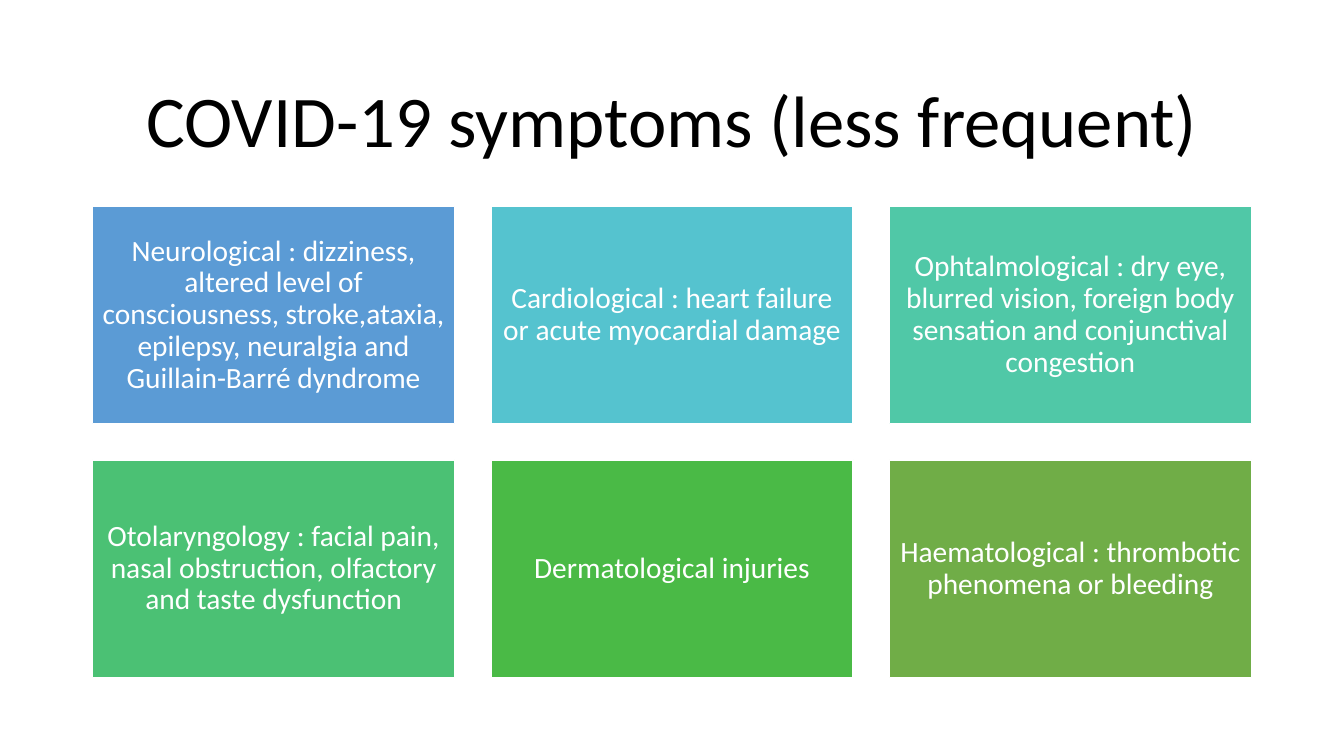
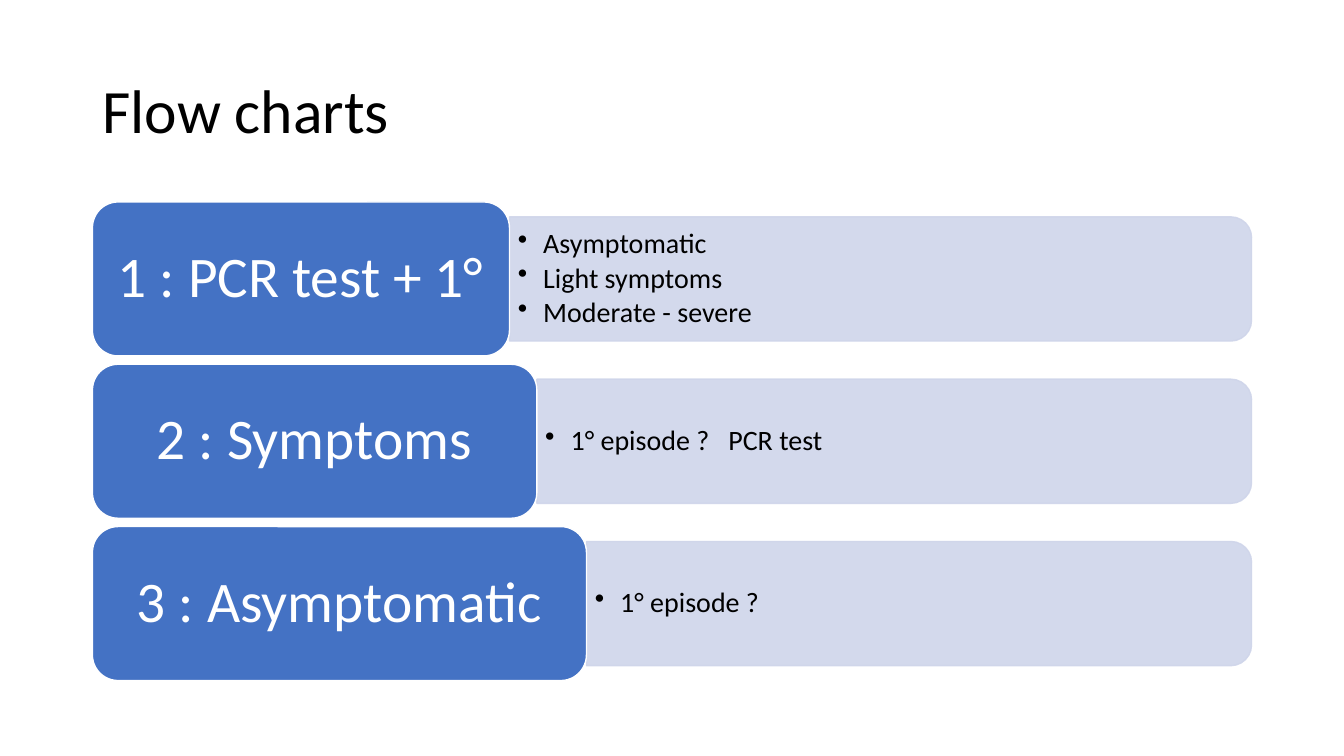
from lxml import etree
from pptx import Presentation
from pptx.dml.color import RGBColor
from pptx.enum.shapes import MSO_SHAPE as SHAPE
from pptx.enum.text import MSO_ANCHOR as ANCHOR, PP_ALIGN as ALIGN
from pptx.oxml.ns import qn
from pptx.util import Cm, Pt

FONT = "Calibri"
BLACK = RGBColor(0x00, 0x00, 0x00)
WHITE = RGBColor(0xFF, 0xFF, 0xFF)
BLUE = RGBColor(0x44, 0x72, 0xC4)
PALE_BLUE = RGBColor(0xCF, 0xD5, 0xEA)

LEFT, CONTENT_WIDTH = 2.33, 29.21  # centimetres, as are all lengths below

prs = Presentation()
prs.slide_width, prs.slide_height = Cm(33.87), Cm(19.05)


def write(shape, text, size, color, align=ALIGN.CENTER, inset=0.23):
    """Fill a shape with vertically centred text, one paragraph per line."""
    frame = shape.text_frame
    frame.text = text
    frame.word_wrap = True
    frame.vertical_anchor = ANCHOR.MIDDLE
    frame.margin_left = frame.margin_right = Cm(inset)
    for paragraph in frame.paragraphs:
        paragraph.alignment = align
        paragraph.line_spacing = 0.9
        for run in paragraph.runs:
            run.font.name = FONT
            run.font.size = Pt(size)
            run.font.color.rgb = color


def add_block(slide, kind, left, top, width, height, fill, line=WHITE):
    block = slide.shapes.add_shape(kind, Cm(left), Cm(top), Cm(width), Cm(height))
    block.shadow.inherit = False
    block.fill.solid()
    block.fill.fore_color.rgb = fill
    block.line.color.rgb = line
    block.line.width = Pt(1)
    return block


slides = []
for heading, top, height, size, align in [
    ("COVID-19 symptoms (less frequent)", 1.55, 3.15, 52, ALIGN.CENTER),
    ("Flow charts", 1.01, 3.68, 44, ALIGN.LEFT),
]:
    slide = prs.slides.add_slide(prs.slide_layouts[5])
    title = slide.shapes.title
    title.left, title.top = Cm(LEFT), Cm(top)
    title.width, title.height = Cm(CONTENT_WIDTH), Cm(height)
    write(title, heading, size, BLACK, align, inset=0.25)
    slides.append(slide)
symptoms_slide, flow_slide = slides

# Symptom cards in a grid
COLUMNS = 3
CARD_WIDTH, CARD_HEIGHT, CARDS_TOP = 9.13, 5.48, 5.2
CARD_GAP = (CONTENT_WIDTH - COLUMNS * CARD_WIDTH) / (COLUMNS - 1)
symptoms = [
    ("Neurological : dizziness, altered level of consciousness, stroke,ataxia, "
     "epilepsy, neuralgia and Guillain-Barré dyndrome", RGBColor(0x5B, 0x9B, 0xD5)),
    ("Cardiological : heart failure or acute myocardial damage",
     RGBColor(0x55, 0xC3, 0xCF)),
    ("Ophtalmological : dry eye, blurred vision, foreign body sensation and "
     "conjunctival congestion", RGBColor(0x50, 0xC8, 0xA7)),
    ("Otolaryngology : facial pain, nasal obstruction, olfactory and taste "
     "dysfunction", RGBColor(0x4B, 0xC1, 0x74)),
    ("Dermatological injuries", RGBColor(0x4A, 0xBA, 0x46)),
    ("Haematological : thrombotic phenomena or bleeding",
     RGBColor(0x70, 0xAD, 0x47)),
]
for index, (symptom, color) in enumerate(symptoms):
    row, column = divmod(index, COLUMNS)
    card = add_block(symptoms_slide, SHAPE.RECTANGLE,
                     LEFT + column * (CARD_WIDTH + CARD_GAP),
                     CARDS_TOP + row * (CARD_HEIGHT + CARD_GAP),
                     CARD_WIDTH, CARD_HEIGHT, color)
    write(card, symptom, 21, WHITE)

# Flow chart rows: a label, then a bar that fills the rest of the width
ROWS_TOP, ROW_PITCH, LABEL_HEIGHT, BAR_HEIGHT = 5.09, 4.09, 3.88, 3.13
BULLET_INDENT = Cm(0.64)
flows = [
    ("1 : PCR test + 1°", 10.51, "Asymptomatic\nLight symptoms\nModerate - severe"),
    ("2 : Symptoms", 11.2, "1° episode ?   PCR test"),
    ("3 : Asymptomatic", 12.45, "1° episode ?"),
]
for row, (step, label_width, cases) in enumerate(flows):
    label_top = ROWS_TOP + row * ROW_PITCH
    bar_left = LEFT + label_width
    bar_width = CONTENT_WIDTH - label_width
    bar_top = label_top + (LABEL_HEIGHT - BAR_HEIGHT) / 2

    # The bar is turned about its centre so that its round corners face right
    turn_shift = (bar_width - BAR_HEIGHT) / 2
    bar = add_block(flow_slide, SHAPE.ROUND_2_SAME_RECTANGLE,
                    bar_left + turn_shift, bar_top - turn_shift,
                    BAR_HEIGHT, bar_width, PALE_BLUE, PALE_BLUE)
    bar.rotation = 90
    for color_node in bar._element.spPr.iter(qn("a:srgbClr")):
        etree.SubElement(color_node, qn("a:alpha"), val="90000")

    case_list = flow_slide.shapes.add_textbox(
        Cm(bar_left), Cm(bar_top), Cm(bar_width), Cm(BAR_HEIGHT))
    write(case_list, cases, 20, BLACK, ALIGN.LEFT, inset=0.21)
    for case in case_list.text_frame.paragraphs:
        case.space_after = Pt(3)
        properties = case._p.get_or_add_pPr()
        properties.set("marL", str(BULLET_INDENT))
        properties.set("indent", str(-BULLET_INDENT))
        etree.SubElement(properties, qn("a:buChar"), char="•")

    label = add_block(flow_slide, SHAPE.ROUNDED_RECTANGLE, LEFT, label_top,
                      label_width, LABEL_HEIGHT, BLUE)
    write(label, step, 41, WHITE)

prs.save("out.pptx")
